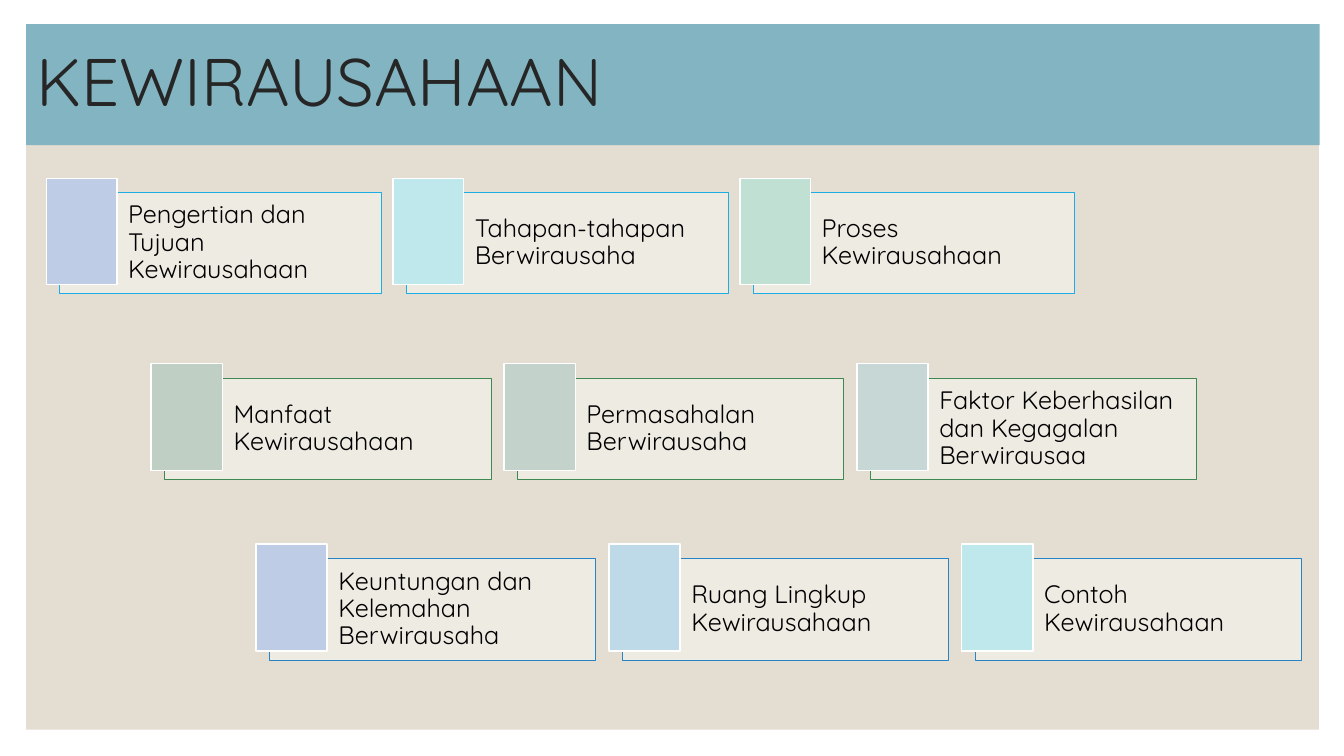
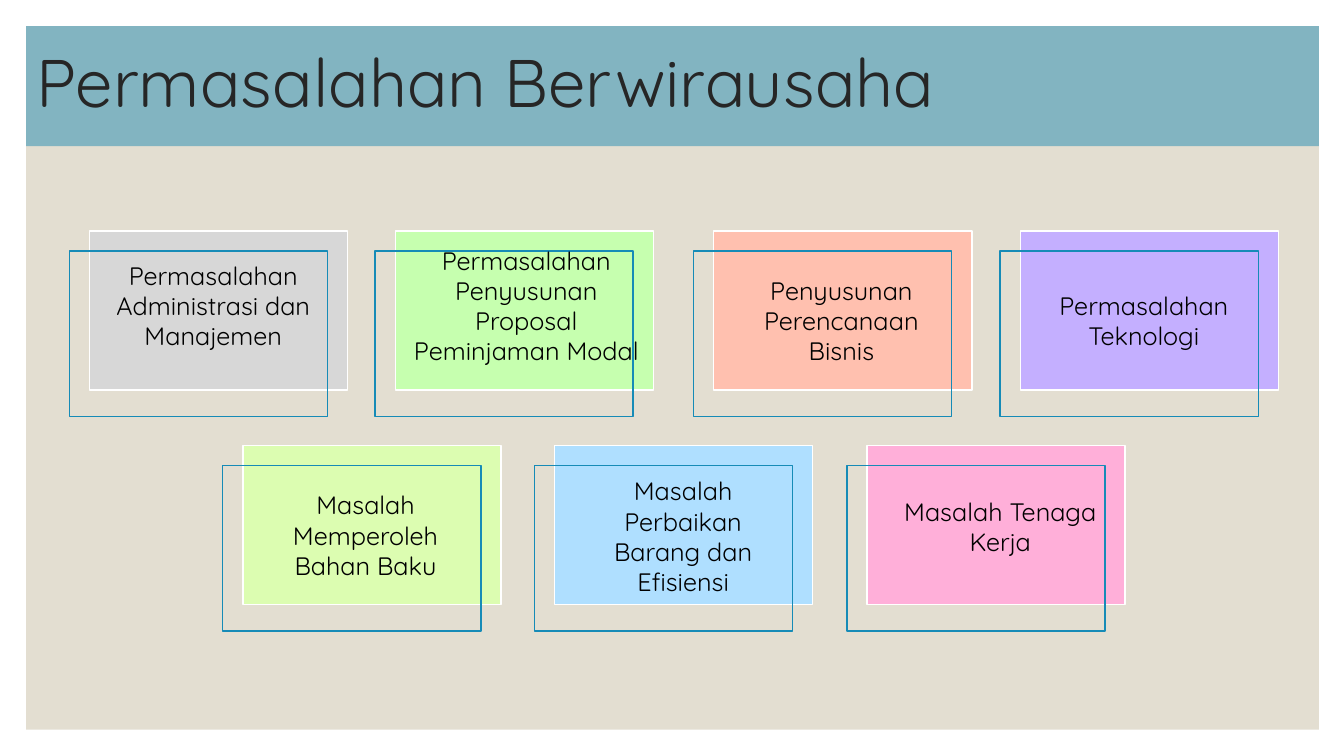
from lxml import etree
from pptx import Presentation
from pptx.dml.color import RGBColor
from pptx.enum.shapes import MSO_SHAPE
from pptx.enum.text import MSO_ANCHOR, MSO_AUTO_SIZE, PP_ALIGN
from pptx.oxml.ns import qn
from pptx.util import Emu, Pt

RECT = MSO_SHAPE.RECTANGLE
MIDDLE, TOP = MSO_ANCHOR.MIDDLE, MSO_ANCHOR.TOP
LEFT, CENTER = PP_ALIGN.LEFT, PP_ALIGN.CENTER
NO_FIT = MSO_AUTO_SIZE.NONE

SCALE = 9144
FONT = "Quicksand"
WHITE, BLACK, INK = "FFFFFF", "000000", "262626"
BAND, PANEL, FRAME = "82B4C1", "E3DED1", "168BB7"
PANEL_BOX = (26, 26, 1282, 698)

TOPICS = [
    ((59, 191, 319, 100), 344, "1CADE4", [
        ("Pengertian dan Tujuan Kewirausahaan", "BECDE5"),
        ("Tahapan-tahapan Berwirausaha", "BEE8EC"),
        ("Proses Kewirausahaan", "C0E0D3")]),
    ((163, 375, 324, 101), 350, "3E8853", [
        ("Manfaat Kewirausahaan", "C0CFC3"),
        ("Permasahalan Berwirausaha", "C3D3CC"),
        ("Faktor Keberhasilan dan Kegagalan Berwirausaa", "C6D7D6")]),
    ((267, 554, 324, 101), 350, "2683C6", [
        ("Keuntungan dan Kelemahan Berwirausaha", "BECDE5"),
        ("Ruang Lingkup Kewirausahaan", "BEDAE9"),
        ("Contoh Kewirausahaan", "BEE8EC")]),
]

ISSUES = [
    (249, [
        (69, "D7D7D7", (34, 4, 217, 131),
         "Permasalahan Administrasi dan Manajemen"),
        (372, "C6FFAF", (25, -11, 250, 162),
         "Permasalahan Penyusunan Proposal Peminjaman Modal"),
        (688, "FFC0AF", (37, 19, 219, 101),
         "Penyusunan Perencanaan Bisnis"),
        (992, "C4AFFF", (30, 34, 225, 71),
         "Permasalahan Teknologi")]),
    (462, [
        (221, "DCFDB1", (29, 19, 225, 101),
         "Masalah Memperoleh Bahan Baku"),
        (530, "AFDFFF", (38, 5, 219, 131),
         "Masalah Perbaikan Barang dan Efisiensi"),
        (840, "FFAFD9", (39, 25, 226, 71),
         "Masalah Tenaga Kerja")]),
]


def px(count):
    return Emu(round(count * SCALE))


def rgb(code):
    return RGBColor.from_string(code)


def paint(shape, fill):
    shape.fill.solid()
    shape.fill.fore_color.rgb = rgb(fill)


def add_rect(slide, box, fill=None, line=None, weight=1):
    shape = slide.shapes.add_shape(RECT, *map(px, box))
    shape.shadow.inherit = False
    if fill:
        paint(shape, fill)
    else:
        shape.fill.background()
    if line:
        shape.line.color.rgb = rgb(line)
        shape.line.width = Pt(weight)
    else:
        shape.line.fill.background()
    return shape


def fade(shape, percent):
    color = shape.fill._xPr.find(qn("a:solidFill"))[0]
    etree.SubElement(color, qn("a:alpha")).set("val", str(percent * 1000))


def write(shape, text, size=18, color=BLACK, align=LEFT, anchor=MIDDLE,
          spacing=0.9):
    frame = shape.text_frame
    frame.text = text
    frame.word_wrap = True
    frame.auto_size = NO_FIT
    frame.vertical_anchor = anchor
    line = frame.paragraphs[0]
    line.alignment = align
    line.line_spacing = spacing
    font = line.runs[0].font
    font.name = FONT
    font.size = Pt(size)
    font.color.rgb = rgb(color)
    return frame


def add_page(deck, layout, text, box):
    slide = deck.slides.add_slide(layout)
    title = slide.shapes.title
    title.left, title.top, title.width, title.height = map(px, box)
    paint(title, BAND)
    write(title, text, 48, INK)
    return slide


def add_topic(slide, box, text, fill, line):
    left, top, _, high = box
    card = add_rect(slide, box, WHITE, line, 0.5)
    fade(card, 40)
    frame = write(card, text)
    frame.margin_left = px(0.68 * high)
    frame.margin_top = frame.margin_right = frame.margin_bottom = px(7)
    tab = (left - 0.13 * high, top - 0.14 * high, 0.7 * high, 1.05 * high)
    add_rect(slide, tab, fill, WHITE)


def add_issue(slide, left, top, fill, note, text):
    add_rect(slide, (left + 20, top - 20, 256, 158), fill, WHITE)
    add_rect(slide, (left, top, 256, 164), line=FRAME)
    across, down, wide, high = note
    box = (left + across, top + down, wide, high)
    label = slide.shapes.add_textbox(*map(px, box))
    write(label, text, align=CENTER, anchor=TOP, spacing=1.0)


def topic_page(deck, layout):
    slide = add_page(deck, layout, "KEWIRAUSAHAAN", (26, 24, 1283, 120))
    for (left, top, wide, high), pitch, line, items in TOPICS:
        for step, (text, fill) in enumerate(items):
            box = (left + step * pitch, top, wide, high)
            add_topic(slide, box, text, fill, line)
    return slide


def issue_page(deck, layout):
    slide = add_page(deck, layout, "Permasalahan Berwirausaha",
                     (26, 26, 1282, 119))
    for top, items in ISSUES:
        for left, fill, note, text in items:
            add_issue(slide, left, top, fill, note, text)


def main():
    deck = Presentation()
    deck.slide_width, deck.slide_height = px(1333), px(750)
    layout = deck.slide_layouts[5]
    first = topic_page(deck, layout)
    panel = add_rect(first, PANEL_BOX, PANEL)
    layout.shapes._spTree.insert(2, panel._element)
    issue_page(deck, layout)
    deck.save("out.pptx")


if __name__ == "__main__":
    main()
